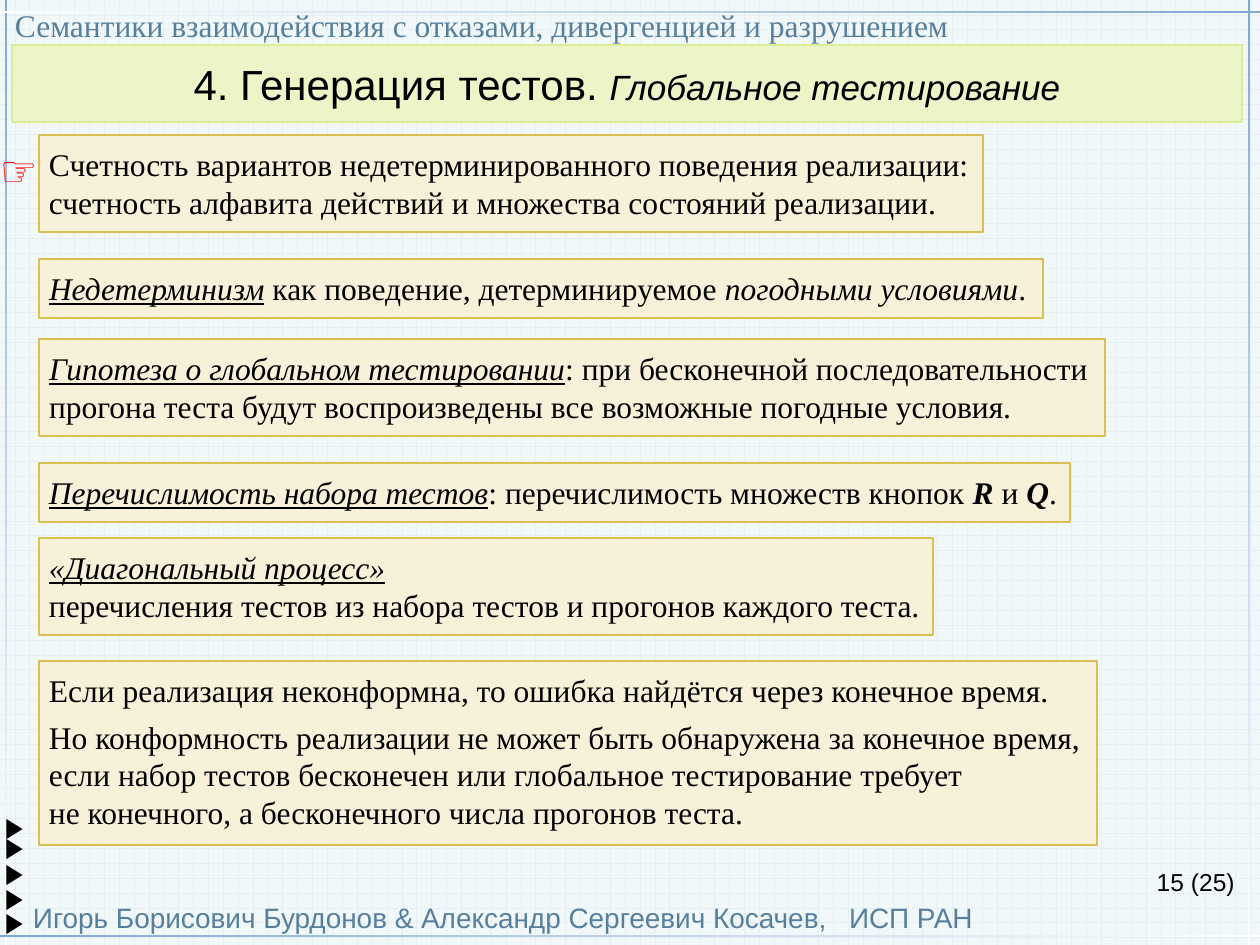
from lxml.etree import SubElement
from pptx import Presentation
from pptx.dml.color import RGBColor
from pptx.enum.dml import MSO_PATTERN
from pptx.enum.shapes import MSO_SHAPE
from pptx.enum.text import MSO_ANCHOR, PP_ALIGN
from pptx.oxml.ns import qn
from pptx.util import Pt

SCALE = 914400 / 126
WIDTH, HEIGHT = 1260, 945
SERIF, SANS = "Times New Roman", "Arial"
BLACK, SLATE, RED = "000000", "567F9E", "FF0000"

HEADER = "Семантики взаимодействия с отказами, дивергенцией и разрушением"
AUTHORS = "Игорь Борисович Бурдонов & Александр Сергеевич Косачев,\tИСП РАН"
TITLE = [("4. Генерация тестов. ", "", 24), ("Глобальное тестирование", "i", 20)]

# Each panel: top, width, height, paragraphs; a paragraph is a list of (text, style)
PANELS = [
    (135, 944, 97, [
        [("Счетность вариантов недетерминированного поведения реализации:", "")],
        [("счетность алфавита действий и множества состояний реализации.", "")]]),
    (259, 1004, 59, [
        [("Недетерминизм", "iu"), (" как поведение, детерминируемое ", ""),
         ("погодными условиями", "i"), (".", "")]]),
    (339, 1066, 97, [
        [("Гипотеза о глобальном тестировании", "iu"),
         (": при бесконечной последовательности", "")],
        [("прогона теста будут воспроизведены все возможные погодные условия.", "")]]),
    (463, 1031, 59, [
        [("Перечислимость набора тестов", "iu"),
         (": перечислимость множеств кнопок ", ""),
         ("R", "bi"), (" и ", ""), ("Q", "bi"), (".", "")]]),
    (538, 894, 97, [
        [("«Диагональный процесс»", "iu")],
        [("перечисления тестов из набора тестов и прогонов каждого теста.", "")]]),
    (661, 1058, 184, [
        [("Если реализация неконформна, то ошибка найдётся через конечное время.", "")],
        [("Но конформность реализации не может быть обнаружена за конечное время,", "")],
        [("если набор тестов бесконечен или глобальное тестирование требует", "")],
        [("не конечного, а бесконечного числа прогонов теста.", "")]]),
]
CONCLUSION_GAP = 5
MARKER_TOPS = [810, 830, 856, 881, 905]
# Frame bars: left, top, width, height, gradient angle
BARS = [(5, 0, 2, HEIGHT, 270), (0, 11, WIDTH, 2, 180),
        (0, 935, WIDTH, 2, 0), (1248, 0, 2, HEIGHT, 270)]


def px(value):
    return round(value * SCALE)


def color(value):
    return RGBColor.from_string(value)


def add_rectangle(page, place, fill=None, line=None, weight=1):
    box = page.shapes.add_shape(MSO_SHAPE.RECTANGLE, *map(px, place))
    box.shadow.inherit = False
    if fill:
        box.fill.solid()
        box.fill.fore_color.rgb = color(fill)
    if line:
        box.line.color.rgb = color(line)
        box.line.width = Pt(weight)
    else:
        box.line.fill.background()
    return box


def add_bar(page, *place, angle):
    bar = add_rectangle(page, place)
    bar.fill.gradient()
    bar.fill.gradient_angle = angle
    for stop, shade in zip(bar.fill.gradient_stops, ("7FA9D3", "FFFFFF")):
        stop.color.rgb = color(shade)


def add_span(para, text, style="", size=18, font=SERIF, ink=BLACK):
    """Append a run; style holds any of the letters b, i and u."""
    span = para.add_run()
    span.text = text
    span.font.name = font
    span.font.size = Pt(size)
    span.font.color.rgb = color(ink)
    span.font.bold = "b" in style
    span.font.italic = "i" in style
    span.font.underline = "u" in style


def set_frame(box, margins=(0, 0), anchor=MSO_ANCHOR.TOP, wrap=True):
    frame = box.text_frame
    frame.word_wrap = wrap
    frame.vertical_anchor = anchor
    frame.margin_left = frame.margin_right = px(margins[0])
    frame.margin_top = frame.margin_bottom = px(margins[1])
    return frame


def add_label(page, place, text, align=PP_ALIGN.LEFT, wrap=False,
              anchor=MSO_ANCHOR.TOP, tab=None, **style):
    box = page.shapes.add_textbox(*map(px, place))
    para = set_frame(box, anchor=anchor, wrap=wrap).paragraphs[0]
    para.alignment = align
    if tab:
        tabs = SubElement(para._p.get_or_add_pPr(), qn("a:tabLst"))
        SubElement(tabs, qn("a:tab"), pos=str(px(tab)), algn="l")
    add_span(para, text, **style)


def add_panel(page, top, width, height, lines):
    box = add_rectangle(page, (39, top, width, height), "F7F1D9", "DAC052")
    frame = set_frame(box, (10, 10), wrap=False)
    for index, spans in enumerate(lines):
        para = frame.paragraphs[0] if index == 0 else frame.add_paragraph()
        para.alignment = PP_ALIGN.LEFT
        if index == 1 and len(lines) > 2:
            para.space_before = Pt(CONCLUSION_GAP)
        for text, style in spans:
            add_span(para, text, style)


def add_title(page):
    box = add_rectangle(page, (12, 45, 1230, 77), "EBF5C7", "DBED97", 0.75)
    para = set_frame(box, (0, 13), MSO_ANCHOR.MIDDLE).paragraphs[0]
    para.alignment = PP_ALIGN.CENTER
    for text, style, size in TITLE:
        add_span(para, text, style, size, SANS)


def main():
    deck = Presentation()
    deck.slide_width, deck.slide_height = px(WIDTH), px(HEIGHT)
    page = deck.slides.add_slide(deck.slide_layouts[6])
    backdrop = page.background.fill
    backdrop.patterned()
    backdrop.pattern = MSO_PATTERN.HORIZONTAL_BRICK
    backdrop.fore_color.rgb = color("E7EDF5")
    backdrop.back_color.rgb = color("F1F8F9")

    for *place, angle in BARS:
        add_bar(page, *place, angle=angle)
    add_label(page, (33, 900, 1100, 34), AUTHORS, wrap=True, tab=816,
              anchor=MSO_ANCHOR.BOTTOM, size=16, font=SANS, ink=SLATE)
    add_label(page, (15, 6, 1226, 38), HEADER, wrap=True, ink=SLATE)
    add_label(page, (916, 867, 268, 30), "15", PP_ALIGN.RIGHT, wrap=True,
              size=14, font=SANS)
    add_label(page, (1191, 867, 44, 30), "(25)", size=14, font=SANS)
    add_title(page)
    for panel in PANELS:
        add_panel(page, *panel)
    add_label(page, (0, 145, 39, 50), "☞", style="b", size=24, font=SANS, ink=RED)
    for top in MARKER_TOPS:
        add_label(page, (5, top, 15, 34), "▶", style="b", size=16)
    deck.save("out.pptx")


if __name__ == "__main__":
    main()
